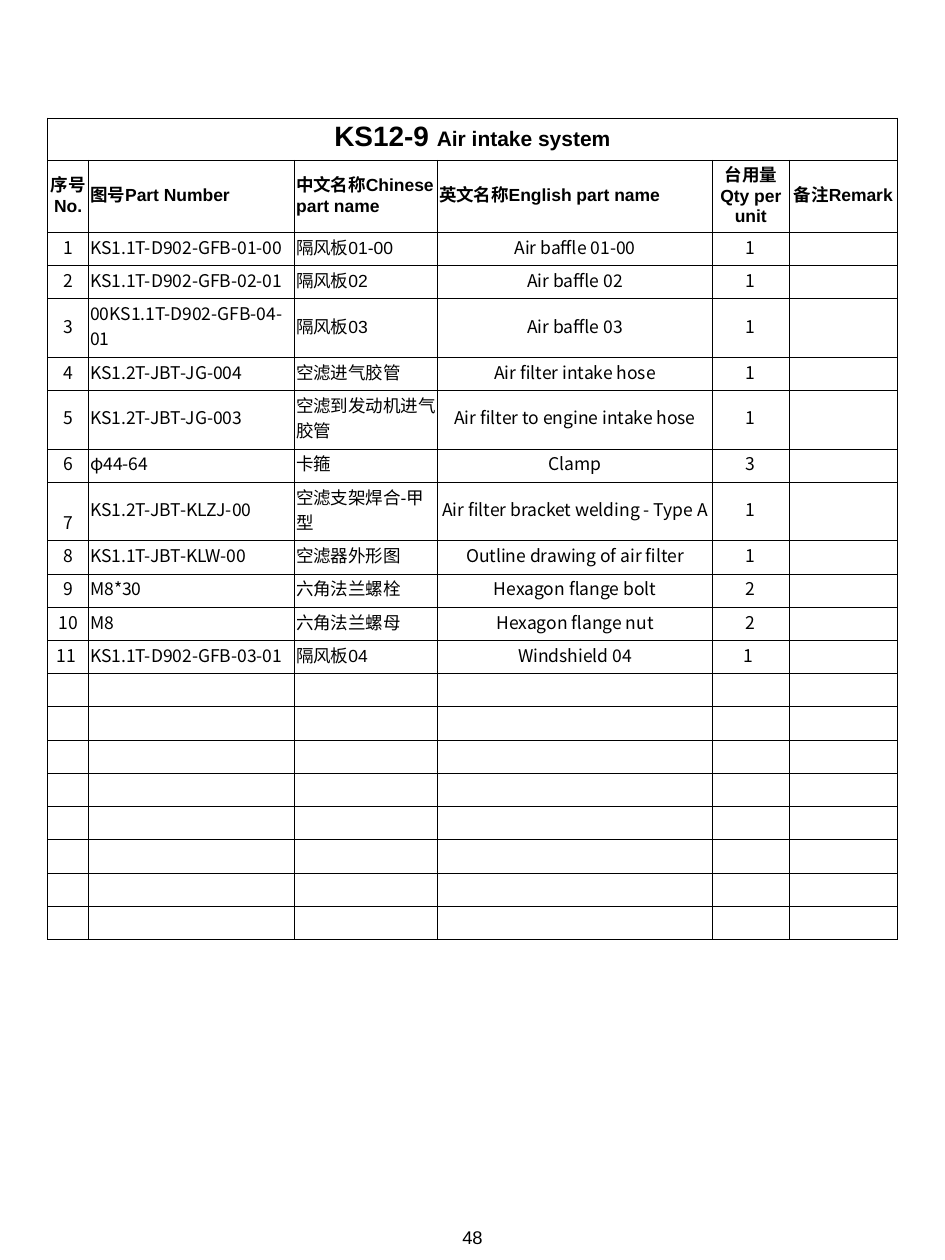
"""Build the parts list page for the air intake system."""
from dataclasses import dataclass

from lxml.etree import SubElement
from pptx import Presentation
from pptx.dml.color import RGBColor
from pptx.enum.text import MSO_ANCHOR, PP_ALIGN
from pptx.oxml.ns import qn
from pptx.util import Cm, Pt


@dataclass(frozen=True)
class Theme:
    ink: str = "000000"
    paper: str = "FFFFFF"
    latin: str = "Arial"
    chinese: str = "Noto Sans CJK SC"
    code_size: float = 16
    title_size: float = 12
    body_size: float = 10
    page_size: float = 10.5
    border: float = 0.5


theme = Theme()


def add_text(paragraph, text, size, name, bold=False):
    run = paragraph.add_run()
    run.text = text
    for attribute, value in {"size": Pt(size), "name": name, "bold": bold}.items():
        setattr(run.font, attribute, value)
    run.font.color.rgb = RGBColor.from_string(theme.ink)
    SubElement(run.font._element, qn("a:ea"), typeface=theme.chinese)


def add_borders(cell):
    properties = cell._tc.get_or_add_tcPr()
    for side in ("L", "R", "T", "B"):
        line = SubElement(properties, qn(f"a:ln{side}"), w=str(Pt(theme.border)))
        SubElement(SubElement(line, qn("a:solidFill")), qn("a:srgbClr"), val=theme.ink)


headings = ["序号No.", "图号Part Number", "中文名称Chinese part name",
            "英文名称English part name", "台用量Qty per unit", "备注Remark"]
parts = [
    ["1", "KS1.1T-D902-GFB-01-00", "隔风板01-00", "Air baffle 01-00", "1"],
    ["2", "KS1.1T-D902-GFB-02-01", "隔风板02", "Air baffle 02", "1"],
    ["3", "00KS1.1T-D902-GFB-04-01", "隔风板03", "Air baffle 03", "1"],
    ["4", "KS1.2T-JBT-JG-004", "空滤进气胶管", "Air filter intake hose", "1"],
    ["5", "KS1.2T-JBT-JG-003", "空滤到发动机进气胶管", "Air filter to engine intake hose", "1"],
    ["6", "φ44-64", "卡箍", "Clamp", "3"],
    ["7", "KS1.2T-JBT-KLZJ-00", "空滤支架焊合-甲型", "Air filter bracket welding - Type A", "1"],
    ["8", "KS1.1T-JBT-KLW-00", "空滤器外形图", "Outline drawing of air filter", "1"],
    ["9", "M8*30", "六角法兰螺栓", "Hexagon flange bolt", "2"],
    ["10", "M8", "六角法兰螺母", "Hexagon flange nut", "2"],
    ["11 ", "KS1.1T-D902-GFB-03-01", "隔风板04", "Windshield 04", "1 "],
]
spare_rows = 8
column_widths = [0.83, 4.15, 2.88, 5.54, 1.55, 2.18]
title_height, heading_height, single_height, double_height = 0.85, 1.45, 0.67, 1.18
two_line_parts = {"3", "5", "7"}
row_heights = [title_height, heading_height]
row_heights += [double_height if part[0] in two_line_parts else single_height for part in parts]
row_heights += [single_height] * spare_rows
margins = {"margin_left": Cm(0.03), "margin_right": Cm(0.03),
           "margin_top": Cm(0.03), "margin_bottom": Cm(0.12)}

presentation = Presentation()
presentation.slide_width, presentation.slide_height = Cm(19.05), Cm(25.4)
slide = presentation.slides.add_slide(presentation.slide_layouts[6])

table = slide.shapes.add_table(
    len(row_heights), len(column_widths), Cm(0.96), Cm(2.38),
    Cm(sum(column_widths)), Cm(sum(row_heights))).table
for attribute in ("first_row", "horz_banding"):
    setattr(table, attribute, False)
for column, width in zip(table.columns, column_widths):
    column.width = Cm(width)
for row, height in zip(table.rows, row_heights):
    row.height = Cm(height)

for cell in table.iter_cells():
    for attribute, value in margins.items():
        setattr(cell, attribute, value)
    cell.vertical_anchor = MSO_ANCHOR.MIDDLE
    add_borders(cell)
    cell.fill.solid()
    cell.fill.fore_color.rgb = RGBColor.from_string(theme.paper)
    end_format = cell.text_frame.paragraphs[0]._p.get_or_add_endParaRPr()
    end_format.set("sz", str(int(theme.body_size * 100)))

title_cell = table.cell(0, 0)
title_cell.merge(table.cell(0, len(column_widths) - 1))
title = title_cell.text_frame.paragraphs[0]
title.alignment = PP_ALIGN.CENTER
add_text(title, "KS12-9 ", theme.code_size, theme.latin, True)
add_text(title, "Air intake system", theme.title_size, theme.latin, True)

for row_number, values in enumerate([headings] + parts, start=1):
    is_heading = values is headings
    centred = {0, 4, 5} if is_heading else {0, 3, 4}
    for column_number, text in enumerate(values):
        cell = table.cell(row_number, column_number)
        paragraph = cell.text_frame.paragraphs[0]
        paragraph.alignment = PP_ALIGN.CENTER if column_number in centred else PP_ALIGN.LEFT
        name = theme.latin if is_heading or column_number == 2 else theme.chinese
        add_text(paragraph, text, theme.body_size, name, is_heading)
        if text == "7":
            cell.vertical_anchor = MSO_ANCHOR.BOTTOM

page_box = slide.shapes.add_textbox(Cm(6.5), Cm(24.59), Cm(6.05), Cm(0.71))
page_box.text_frame.word_wrap = True
page_number = page_box.text_frame.paragraphs[0]
page_number.alignment = PP_ALIGN.CENTER
add_text(page_number, "48", theme.page_size, theme.latin)

presentation.save("out.pptx")
